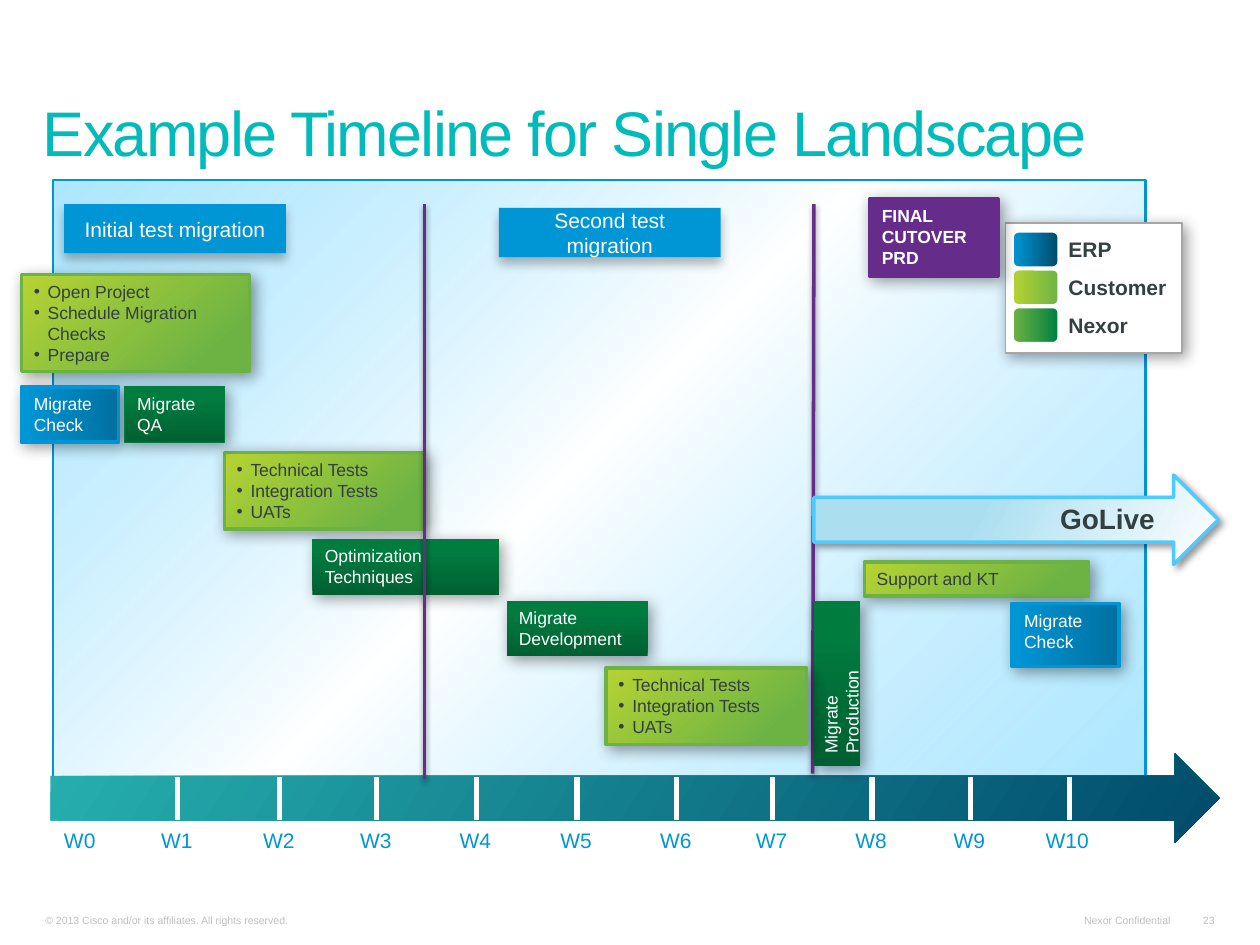
import pptx
import pptx.util
import pptx.oxml
import pptx.oxml.ns
import pptx.dml.color
import pptx.enum.shapes
import pptx.enum.text

Inches = pptx.util.Inches
Pt = pptx.util.Pt
Shape = pptx.enum.shapes.MSO_SHAPE
Align = pptx.enum.text.PP_ALIGN
Anchor = pptx.enum.text.MSO_ANCHOR

COLORS = {
    "blue": "0096D6", "sky": "89DCFF", "white": "FFFFFF", "ink": "334041",
    "navy": "004B6B", "lime": "B7D333", "leaf": "6DB344", "green": "008041",
    "teal": "26AFAE", "title": "01BBBB", "purple": "652D89", "gray": "A6A6A6",
    "pale": "C0C0C0", "cyan": "4DCAFF", "ice": "ABDFF0", "deep": "0070A0",
    "pine": "006031", "moss": "007C3F", "fern": "007D3F", "edge": "007D40",
}
# Gradients: angle, then (position, colour, opacity) stops
FADES = {
    "panel": (45, (0, "sky", 68), (47, "white", 100), (100, "sky", 68)),
    "time": (32, (0, "teal", 100), (100, "navy", 100)),
    "live": (28, (41, "ice", 100), (100, "white", 100)),
    "lime": (48, (0, "lime", 100), (83, "leaf", 100)),
    "blue": (0, (0, "blue", 100), (100, "deep", 100)),
    "pine": (270, (0, "pine", 100), (80, "moss", 100), (100, "fern", 100)),
    "key blue": (0, (0, "blue", 100), (100, "navy", 100)),
    "key lime": (0, (0, "lime", 100), (100, "leaf", 100)),
    "key green": (0, (0, "leaf", 100), (100, "green", 100)),
}
# Shadows: opacity, blur, distance, angle
SOFT = (40, 8.8, 3, 45)
CLOSE = (40, 4, 3, 45)
DROP = (27, 6, 4, 90)
THIN = (38, 3.1, 1.6, 90)


def make(xml):
    head, tail = xml.split(">", 1)
    slash = "/" if head.endswith("/") else ""
    head = head.rstrip("/")
    return pptx.oxml.parse_xml(
        f"{head} {pptx.oxml.ns.nsdecls('a')}{slash}>{tail}")


class Board:
    """Holds the style and the current slide."""

    def __init__(self, slide, font="Arial"):
        self.slide = slide
        self.font = font

    def paint(self, color):
        return pptx.dml.color.RGBColor.from_string(COLORS[color])

    def fade(self, shape, name):
        angle, *stops = FADES[name]
        marks = "".join(
            f'<a:gs pos="{pos * 1000}"><a:srgbClr val="{COLORS[color]}">'
            f'<a:alpha val="{alpha * 1000}"/></a:srgbClr></a:gs>'
            for pos, color, alpha in stops)
        shape.fill.background()
        props = shape._element.spPr
        blank = props.find(pptx.oxml.ns.qn("a:noFill"))
        props.replace(blank, make(
            f'<a:gradFill rotWithShape="1"><a:gsLst>{marks}</a:gsLst>'
            f'<a:lin ang="{angle * 60000}" scaled="0"/></a:gradFill>'))

    def shade(self, shape, shadow):
        alpha, blur, dist, angle = shadow
        shape._element.spPr.append(make(
            f'<a:effectLst><a:outerShdw blurRad="{Pt(blur)}" dist="{Pt(dist)}" '
            f'dir="{angle * 60000}" algn="tl" rotWithShape="0">'
            f'<a:srgbClr val="000000"><a:alpha val="{alpha * 1000}"/>'
            '</a:srgbClr></a:outerShdw></a:effectLst>'))

    def letter(self, shape, text, size, color, bold=False, align=Align.LEFT,
               anchor=Anchor.TOP, inset=(0.1, 0.05), wrap=True, bullet=False):
        frame = shape.text_frame
        frame.text = text
        frame.word_wrap = wrap
        frame.vertical_anchor = anchor
        frame.margin_left = frame.margin_right = Inches(inset[0])
        frame.margin_top = frame.margin_bottom = Inches(inset[1])
        for para in frame.paragraphs:
            para.alignment = align
            if bullet:
                props = para._p.get_or_add_pPr()
                props.set("marL", str(Inches(0.11)))
                props.set("indent", str(-Inches(0.11)))
                props.append(make('<a:buFont typeface="Arial"/>'))
                props.append(make('<a:buChar char="•"/>'))
            for run in para.runs:
                run.font.name = self.font
                run.font.size = Pt(size)
                run.font.bold = bold
                run.font.color.rgb = self.paint(color)

    def label(self, place, text, size, color, **style):
        box = self.slide.shapes.add_textbox(*map(Inches, place))
        self.letter(box, text, size, color, **style)
        return box

    def shape(self, kind, place, fill, line=None, width=2, shadow=None, corner=None):
        item = self.slide.shapes.add_shape(kind, *map(Inches, place))
        if corner is not None:
            item.adjustments[0] = corner
        if fill in FADES:
            self.fade(item, fill)
        else:
            item.fill.solid()
            item.fill.fore_color.rgb = self.paint(fill.removeprefix("flat "))
        if line:
            item.line.color.rgb = self.paint(line)
            item.line.width = Pt(width)
        else:
            item.line.fill.background()
        if shadow:
            self.shade(item, shadow)
        else:
            item.shadow.inherit = False
        return item

    def task(self, place, text, fill, line=None, color="white", width=2,
             bold=False, bullet=False):
        item = self.shape(Shape.RECTANGLE, place, fill, line, width, SOFT)
        self.letter(item, text, 10, color, bold, bullet=bullet)
        return item

    def phase(self, left, top, text):
        item = self.shape(Shape.RECTANGLE, (left, top, 1.76, 0.39), "flat blue",
                          shadow=DROP)
        self.letter(item, text, 12, "white", align=Align.CENTER, anchor=Anchor.MIDDLE)

    def rule(self, ends, color, width, shadow=None):
        line = self.slide.shapes.add_connector(
            pptx.enum.shapes.MSO_CONNECTOR.STRAIGHT, *map(Inches, ends))
        line.line.color.rgb = self.paint(color)
        line.line.width = Pt(width)
        if shadow:
            self.shade(line, shadow)
        else:
            line._element.spPr.append(make("<a:effectLst/>"))


def main():
    deck = pptx.Presentation()
    deck.slide_width, deck.slide_height = Inches(10), Inches(7.5)
    board = Board(deck.slides.add_slide(deck.slide_layouts[6]))

    # Footer
    foot = {"anchor": Anchor.BOTTOM, "inset": (0.09, 0.04)}
    board.label((0.27, 7.2, 3.74, 0.19),
                "© 2013 Cisco and/or its affiliates. All rights reserved.",
                6, "pale", **foot)
    for place, text in (((8.51, 7.2, 0.87, 0.19), "Nexor Confidential"),
                        ((9.45, 7.2, 0.28, 0.19), "23")):
        board.label(place, text, 6, "pale", align=Align.RIGHT, wrap=False, **foot)

    # Panel and legend
    board.shape(Shape.ROUNDED_RECTANGLE, (0.42, 1.43, 8.67, 4.96), "panel",
                "blue", 1.5, corner=0)
    board.shape(Shape.RECTANGLE, (7.98, 1.77, 1.4, 1.03), "white", "gray", 1, SOFT)
    keys = (("key blue", "ERP"), ("key lime", "Customer"), ("key green", "Nexor"))
    for row, (fill, text) in enumerate(keys):
        board.shape(Shape.ROUNDED_RECTANGLE, (8.04, 1.84 + 0.3 * row, 0.36, 0.28),
                    fill, "white", 1, corner=0.15)
        board.label((8.48, 1.88 + 0.3 * row, 0.91, 0.2), text, 12, "ink",
                    bold=True, inset=(0, 0))

    # Week axis
    board.shape(Shape.RIGHT_ARROW, (0.4, 5.98, 9.28, 0.71), "time")
    ticks = (1.41, 2.22, 2.99, 3.78, 4.58, 5.37, 6.13, 6.92, 7.7, 8.49)
    for tick in ticks:
        board.rule((tick, 6.17, tick, 6.51), "white", 3)
    for week, mid in enumerate((0.64,) + ticks):
        wide = 0.58 if week > 9 else 0.46
        board.label((mid - wide / 2, 6.52, wide, 0.3), f"W{week}", 12, "blue")

    # Title
    title = board.label((0.25, 0.47, 9.39, 0.92), "Example Timeline for Single Landscape",
                        36, "title", anchor=Anchor.BOTTOM, inset=(0.09, 0.05))
    para = title.text_frame.paragraphs[0]
    para.line_spacing = 0.8
    para.runs[0].font._element.set("spc", "-100")

    # Customer and check tasks
    lime = {"fill": "lime", "line": "leaf", "color": "ink"}
    tests = "Technical Tests\nIntegration Tests\nUATs"
    board.task((0.17, 2.18, 1.81, 0.77),
               "Open Project\nSchedule Migration Checks\nPrepare", bullet=True, **lime)
    board.task((1.78, 3.59, 1.59, 0.61), tests, bullet=True, **lime)
    board.task((6.86, 4.46, 1.78, 0.27), "Support and KT", **lime)
    for place in ((0.17, 3.07, 0.77, 0.44), (8.03, 4.79, 0.85, 0.5)):
        board.task(place, "Migrate Check", "blue", "blue")

    # Cutover
    board.rule((6.45, 6.14, 6.46, 1.62), "purple", 2, THIN)
    board.task((6.9, 1.58, 1.02, 0.61), "FINAL CUTOVER\nPRD", "purple", "purple",
               bold=True)

    # Migration tasks
    board.task((0.99, 3.07, 0.79, 0.44), "Migrate\nQA", "pine", "edge", width=0.75)
    board.task((4.02, 4.77, 1.12, 0.44), "Migrate\nDevelopment", "pine")
    final = board.task((6.46, 4.77, 0.37, 1.31), "Migrate Production", "pine")
    final.text_frame._txBody.bodyPr.set("vert", "vert270")
    board.task((2.48, 4.28, 1.48, 0.44), "Optimization Techniques", "pine")
    board.task((4.81, 5.3, 1.59, 0.61), tests, bullet=True, **lime)

    # Go-live arrow
    board.shape(Shape.RIGHT_ARROW, (6.46, 3.77, 3.21, 0.71), "live", "cyan", 2, CLOSE)
    board.label((8.2, 3.93, 1.18, 0.37), "GoLive", 16, "ink", bold=True,
                align=Align.CENTER)

    # Phases
    board.rule((3.37, 6.18, 3.37, 1.62), "purple", 2, THIN)
    board.phase(0.51, 1.62, "Initial test migration")
    board.phase(3.96, 1.65, "Second test migration")

    deck.save("out.pptx")


if __name__ == "__main__":
    main()
